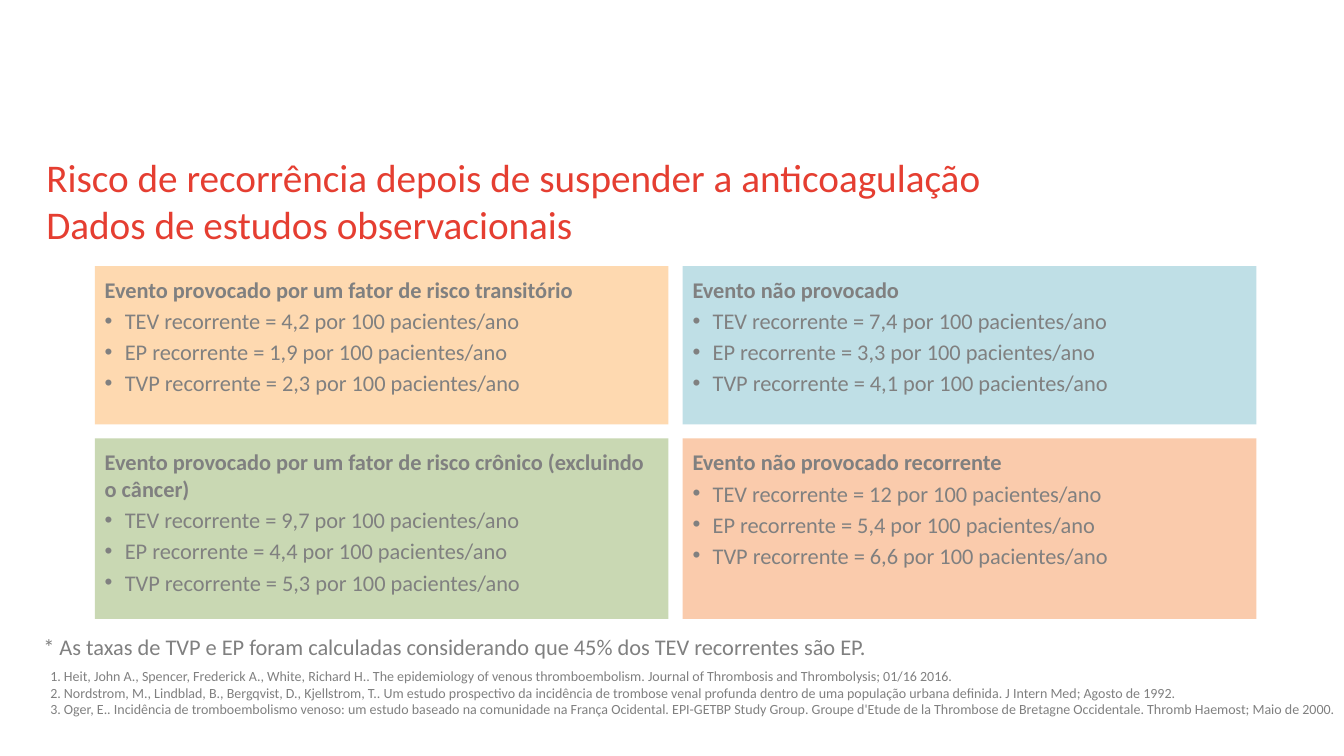
"""Build the slide on recurrence risk after stopping anticoagulation."""
import pptx
import pptx.dml.color
import pptx.enum.shapes
import pptx.enum.text
import pptx.oxml.ns
import pptx.util
from lxml import etree

Inches = pptx.util.Inches
Pt = pptx.util.Pt

FONT = "Calibri"
RED, GRAY = "E53E31", "808080"
TITLE = [
    "Risco de recorrência depois de suspender a anticoagulação\v"
    "Dados de estudos observacionais"
]
FOOTNOTE = [
    "* As taxas de TVP e EP foram calculadas considerando que 45% dos TEV recorrentes são EP."
]
REFERENCES = [
    "1. Heit, John A., Spencer, Frederick A., White, Richard H.. The epidemiology of venous "
    "thromboembolism. Journal of Thrombosis and Thrombolysis; 01/16 2016.",
    "2. Nordstrom, M., Lindblad, B., Bergqvist, D., Kjellstrom, T.. Um estudo prospectivo da "
    "incidência de trombose venal profunda dentro de uma população urbana definida. "
    "J Intern Med; Agosto de 1992.",
    "3. Oger, E.. Incidência de tromboembolismo venoso: um estudo baseado na comunidade na "
    "França Ocidental. EPI-GETBP Study Group. Groupe d'Etude de la Thrombose de Bretagne "
    "Occidentale. Thromb Haemost; Maio de 2000.",
]
EVENTS = ["TEV", "EP", "TVP"]
CARDS = [
    ("Evento provocado por um fator de risco transitório", "FED9B0", ["4,2", "1,9", "2,3"]),
    ("Evento não provocado", "BFDFE6", ["7,4", "3,3", "4,1"]),
    ("Evento provocado por um fator de risco crônico (excluindo o câncer)", "C9D8B3",
     ["9,7", "4,4", "5,3"]),
    ("Evento não provocado recorrente", "FACBAC", ["12", "5,4", "6,6"]),
]
CARD_LEFT, CARD_TOP, CARD_WIDTH, CARD_GAP = 0.94, 2.64, 5.69, 0.14
ROW_HEIGHTS = [1.57, 1.79]


def color(hex_code):
    return pptx.dml.color.RGBColor.from_string(hex_code)


def fill_text(shape, lines, size, hex_code, margins):
    frame = shape.text_frame
    frame.word_wrap = True
    frame.vertical_anchor = pptx.enum.text.MSO_ANCHOR.TOP
    frame.margin_left = frame.margin_right = Inches(margins[0])
    frame.margin_top = frame.margin_bottom = Inches(margins[1])
    frame.text = "\n".join(lines)
    for paragraph in frame.paragraphs:
        paragraph.alignment = pptx.enum.text.PP_ALIGN.LEFT
        for run in paragraph.runs:
            run.font.name = FONT
            run.font.size = Pt(size)
            run.font.color.rgb = color(hex_code)


def add_text(slide, box, lines, size, hex_code, margins):
    shape = slide.shapes.add_textbox(*map(Inches, box))
    fill_text(shape, lines, size, hex_code, margins)


def add_bullet(paragraph):
    paragraph.space_before = Pt(3)
    properties = paragraph._p.get_or_add_pPr()
    properties.set("marL", str(Inches(0.2)))
    properties.set("indent", str(-Inches(0.2)))
    font = etree.SubElement(properties, pptx.oxml.ns.qn("a:buFont"))
    font.set("typeface", "Arial")
    bullet = etree.SubElement(properties, pptx.oxml.ns.qn("a:buChar"))
    bullet.set("char", "•")


def add_card(slide, box, heading, fill, rates):
    rectangle = pptx.enum.shapes.MSO_SHAPE.RECTANGLE
    card = slide.shapes.add_shape(rectangle, *map(Inches, box))
    card.shadow.inherit = False
    card.fill.solid()
    card.fill.fore_color.rgb = color(fill)
    card.line.fill.background()
    lines = [f"{event} recorrente = {rate} por 100 pacientes/ano"
             for event, rate in zip(EVENTS, rates)]
    fill_text(card, [heading, *lines], 16, GRAY, (0.1, 0.1))
    first, *rest = card.text_frame.paragraphs
    first.runs[0].font.bold = True
    for paragraph in rest:
        add_bullet(paragraph)


def main():
    presentation = pptx.Presentation()
    presentation.slide_width = Inches(13.33)
    presentation.slide_height = Inches(7.5)
    slide = presentation.slides.add_slide(presentation.slide_layouts[6])

    add_text(slide, (0.46, 1.47, 12, 0.78), TITLE, 28, RED, (0, 0.05))
    add_text(slide, (0.4, 6.57, 13.49, 0.61), REFERENCES, 10, GRAY, (0.1, 0.05))
    for index, (heading, fill, rates) in enumerate(CARDS):
        row, column = divmod(index, 2)
        left = CARD_LEFT + column * (CARD_WIDTH + CARD_GAP)
        top = CARD_TOP + sum(ROW_HEIGHTS[:row]) + row * CARD_GAP
        add_card(slide, (left, top, CARD_WIDTH, ROW_HEIGHTS[row]), heading, fill, rates)
    add_text(slide, (0.43, 6.28, 11.55, 0.45), FOOTNOTE, 16, GRAY, (0, 0))

    presentation.save("out.pptx")


if __name__ == "__main__":
    main()
